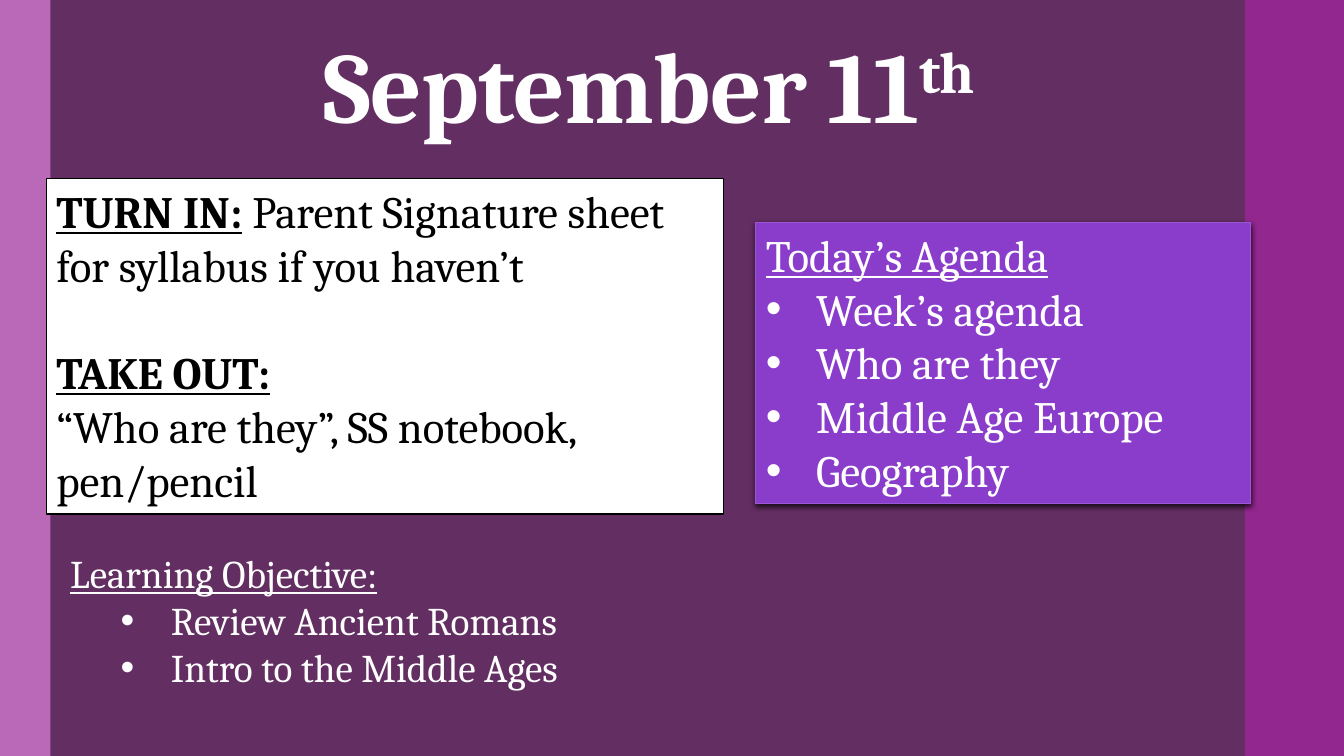
from lxml import etree
from pptx import Presentation
from pptx.dml.color import RGBColor
from pptx.enum.shapes import MSO_SHAPE
from pptx.enum.text import MSO_ANCHOR, MSO_AUTO_SIZE, PP_ALIGN
from pptx.oxml.ns import qn
from pptx.util import Cm, Pt

RECTANGLE = MSO_SHAPE.RECTANGLE
TOP, BOTTOM = MSO_ANCHOR.TOP, MSO_ANCHOR.BOTTOM
LEFT, CENTER = PP_ALIGN.LEFT, PP_ALIGN.CENTER
NO_FIT, GROW = MSO_AUTO_SIZE.NONE, MSO_AUTO_SIZE.SHAPE_TO_FIT_TEXT

PLUM = RGBColor(0x63, 0x2E, 0x62)
MAGENTA = RGBColor(0x92, 0x27, 0x8F)
ORCHID = RGBColor(0xBA, 0x69, 0xB8)
VIOLET = RGBColor(0x8A, 0x3C, 0xCB)
LILAC = RGBColor(0x9B, 0x57, 0xD3)
WHITE = RGBColor(0xFF, 0xFF, 0xFF)
BLACK = RGBColor(0x00, 0x00, 0x00)

FONT = "Cambria"
WIDTH, HEIGHT = 33.87, 19.05
BULLET_HANG = 1.27


def add_panel(page, left, top, width, height, fill, line=None, line_width=0):
    panel = page.shapes.add_shape(RECTANGLE, Cm(left), Cm(top), Cm(width), Cm(height))
    panel.shadow.inherit = False
    panel.fill.solid()
    panel.fill.fore_color.rgb = fill
    if line is None:
        panel.line.fill.background()
    else:
        panel.line.color.rgb = line
        panel.line.width = Pt(line_width)
    return panel


def add_shadow(panel):
    effects = panel._element.spPr.find(qn("a:effectLst"))
    shadow = etree.SubElement(effects, qn("a:outerShdw"), blurRad=str(Pt(4)),
                              dist=str(Pt(1.2)), dir="5400000", rotWithShape="0")
    color = etree.SubElement(shadow, qn("a:srgbClr"), val=str(BLACK))
    etree.SubElement(color, qn("a:alpha"), val="75000")


def start_text(box):
    frame = box.text_frame
    frame.word_wrap = True
    frame.auto_size = GROW
    frame.vertical_anchor = TOP
    return frame


def add_span(para, text, size, color, bold=False, underline=False):
    span = para.add_run()
    span.text = text
    span.font.name = FONT
    span.font.size = Pt(size)
    span.font.color.rgb = color
    span.font.bold = bold
    span.font.underline = underline
    return span


def add_bullet(para, indent):
    properties = para._p.get_or_add_pPr()
    properties.set("marL", str(Cm(indent)))
    properties.set("indent", str(Cm(-BULLET_HANG)))
    etree.SubElement(properties, qn("a:buFont"), typeface="Arial")
    etree.SubElement(properties, qn("a:buChar"), char="•")


def fill_list(box, heading, items, size, indent, level=0):
    frame = start_text(box)
    para = frame.paragraphs[0]
    para.alignment = LEFT
    add_span(para, heading, size, WHITE, underline=True)
    for item in items:
        para = frame.add_paragraph()
        para.alignment = LEFT
        para.level = level
        add_bullet(para, indent)
        add_span(para, item, size, WHITE)


def fill_title(title):
    title.left, title.top = Cm(3.43), Cm(0.36)
    title.width, title.height = Cm(26.16), Cm(3.4)
    frame = title.text_frame
    frame.word_wrap = True
    frame.auto_size = NO_FIT
    frame.vertical_anchor = BOTTOM
    frame.margin_top = Cm(0.08)
    para = frame.paragraphs[0]
    para.alignment = CENTER
    para.line_spacing = 0.85
    date = add_span(para, "September 11", 72, WHITE, bold=True)
    ordinal = add_span(para, "th ", 72, WHITE, bold=True)
    for span in (date, ordinal):
        span.font._element.set("spc", "-50")
    ordinal.font._element.set("baseline", "30000")


def fill_reminders(box):
    frame = start_text(box)
    turn_in = frame.paragraphs[0]
    add_span(turn_in, "TURN IN:", 32, BLACK, bold=True, underline=True)
    add_span(turn_in, " ", 32, BLACK, bold=True)
    add_span(turn_in, "Parent Signature sheet for syllabus if you haven’t", 32, BLACK)
    take_out = frame.add_paragraph()
    take_out.space_before = Pt(38.4)
    add_span(take_out, "TAKE OUT:", 32, BLACK, bold=True, underline=True)
    supplies = frame.add_paragraph()
    add_span(supplies, "“Who are they”, SS notebook, pen/pencil", 32, BLACK)
    for para in frame.paragraphs:
        para.alignment = LEFT


def main():
    deck = Presentation()
    deck.slide_width, deck.slide_height = Cm(WIDTH), Cm(HEIGHT)
    page = deck.slides.add_slide(deck.slide_layouts[5])

    # Background and side bars
    page.background.fill.solid()
    page.background.fill.fore_color.rgb = PLUM
    add_panel(page, 31.37, 0, 2.5, HEIGHT, MAGENTA)
    add_panel(page, 0, 0, 1.27, HEIGHT, ORCHID)

    # Date
    fill_title(page.shapes.title)

    # What to turn in and take out
    fill_reminders(add_panel(page, 1.17, 4.5, 17.07, 8.46, WHITE, BLACK, 1.1))

    # Learning objective
    objective = page.shapes.add_textbox(Cm(1.52), Cm(13.72), Cm(25.78), Cm(3.84))
    fill_list(objective, "Learning Objective:",
              ["Review Ancient Romans", "Intro to the Middle Ages"],
              28, 2 * BULLET_HANG, level=1)

    # Agenda
    agenda = add_panel(page, 19.05, 5.61, 12.47, 7.09, VIOLET, LILAC, 0.75)
    add_shadow(agenda)
    fill_list(agenda, "Today’s Agenda",
              ["Week’s agenda", "Who are they", "Middle Age Europe", "Geography"],
              32, BULLET_HANG)

    deck.save("out.pptx")


if __name__ == "__main__":
    main()
